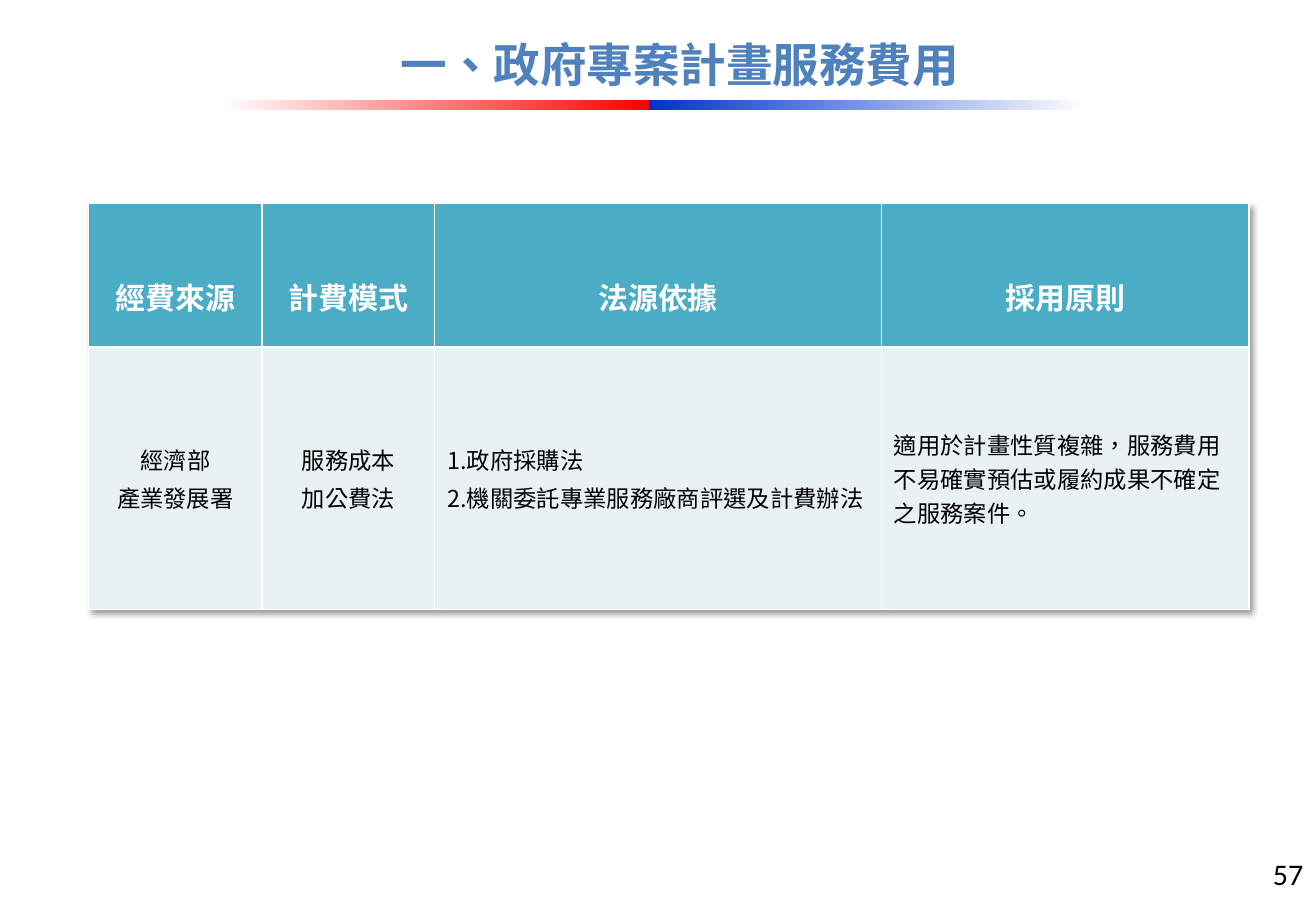
from dataclasses import dataclass

from lxml import etree
from pptx import Presentation
from pptx import util as u
from pptx.dml.color import RGBColor
from pptx.enum import shapes, text
from pptx.oxml import ns


@dataclass(frozen=True)
class Theme:
    """Colours, fonts and type sizes of the slide."""
    title: str = "4F81BD"
    header: str = "4BACC6"
    body: str = "E9F1F5"
    white: str = "FFFFFF"
    black: str = "000000"
    red: str = "FF0000"
    blue: str = "0033CC"
    cjk: str = "Noto Sans CJK SC"
    title_size: int = 28
    header_size: int = 18
    body_size: int = 14
    number_size: int = 18


THEME = Theme()
CENTER, LEFT, RIGHT = text.PP_ALIGN.CENTER, text.PP_ALIGN.LEFT, text.PP_ALIGN.RIGHT
COLUMNS = (3.68, 3.66, 9.47, 7.8)
ROWS = (3.05, 5.56)
HEADINGS = ("經費來源", "計費模式", "法源依據", "採用原則")
DETAILS = (
    (("經濟部", "產業發展署"), CENTER, 0),
    (("服務成本", "加公費法"), CENTER, 0),
    (("1.政府採購法", "2.機關委託專業服務廠商評選及計費辦法"), LEFT, 0.25),
    (("適用於計畫性質複雜，服務費用不易確實預估或履約成果不確定之服務案件。",), LEFT, 0),
)


def add_element(parent, tag, **attributes):
    """Append a DrawingML child element and return it."""
    return etree.SubElement(parent, ns.qn(tag), attributes)


def write(frame, lines, size, color, align, font=THEME.cjk, bold=False):
    """Fill a text frame with one formatted paragraph per line."""
    frame.word_wrap = True
    frame.text = "\n".join(lines)
    for index, paragraph in enumerate(frame.paragraphs):
        paragraph.alignment = align
        if index:
            paragraph.space_before = u.Pt(round(size * 0.2, 1))
        for run in paragraph.runs:
            run.font.size, run.font.bold, run.font.name = u.Pt(size), bold, font
            run.font.color.rgb = RGBColor.from_string(color)
            properties = run._r.get_or_add_rPr()
            properties.set("lang", "zh-TW")
            add_element(properties, "a:ea", typeface=THEME.cjk)


def add_label(slide, box, line, size, color, align, font, bold=False):
    """Add a vertically centred one-line text box."""
    shape = slide.shapes.add_textbox(*map(u.Cm, box))
    write(shape.text_frame, [line], size, color, align, font, bold)
    shape.text_frame.vertical_anchor = text.MSO_ANCHOR.MIDDLE


def add_gradient_bar(slide, left, width, start, end):
    """Add a thin bar that fades from left to right."""
    shape = slide.shapes.add_shape(
        shapes.MSO_SHAPE.RECTANGLE, u.Cm(left), u.Cm(2.13), u.Cm(width), u.Cm(0.2))
    shape.shadow.inherit = False
    shape.line.fill.background()
    shape.fill.gradient()
    shape.fill.gradient_angle = 0
    for stop, position, color in zip(shape.fill.gradient_stops, (0, 1), (start, end)):
        stop.position = position
        stop.color.rgb = RGBColor.from_string(color)


def style_cell(cell, color, bottom_width):
    """Give a cell its fill and white borders."""
    properties = cell._tc.get_or_add_tcPr()
    widths = {"a:lnL": 1, "a:lnR": 1, "a:lnT": 1, "a:lnB": bottom_width}
    for tag, width in widths.items():
        line = add_element(properties, tag, w=str(u.Pt(width)))
        add_element(add_element(line, "a:solidFill"), "a:srgbClr", val=THEME.white)
    cell.fill.solid()
    cell.fill.fore_color.rgb = RGBColor.from_string(color)
    cell.margin_left = cell.margin_right = u.Cm(0.27)
    cell.margin_top = cell.margin_bottom = u.Cm(0.13)


def add_table_shadow(table):
    """Cast a soft shadow towards the lower right of the table."""
    properties = table._tbl.tblPr
    effects = add_element(properties, "a:effectLst")
    properties.insert(0, effects)
    shadow = add_element(effects, "a:outerShdw", blurRad=str(u.Pt(4)), dist=str(u.Pt(3)),
                         dir="2700000", algn="tl", rotWithShape="0")
    color = add_element(shadow, "a:srgbClr", val=THEME.black)
    add_element(color, "a:alpha", val="40000")


def add_fee_table(slide):
    """Add the table of funding sources and fee rules."""
    table = slide.shapes.add_table(
        len(ROWS), len(COLUMNS), u.Cm(1.88), u.Cm(4.32),
        u.Cm(sum(COLUMNS)), u.Cm(sum(ROWS))).table
    for column, width in zip(table.columns, COLUMNS):
        column.width = u.Cm(width)
    for row, height in zip(table.rows, ROWS):
        row.height = u.Cm(height)
    for index, (heading, (lines, align, indent)) in enumerate(zip(HEADINGS, DETAILS)):
        header, detail = table.cell(0, index), table.cell(1, index)
        style_cell(header, THEME.header, 1.5)
        write(header.text_frame, [heading], THEME.header_size, THEME.white, CENTER, bold=True)
        header.text_frame.paragraphs[0].line_spacing = 2.5
        style_cell(detail, THEME.body, 1)
        write(detail.text_frame, lines, THEME.body_size, THEME.black, align)
        detail.vertical_anchor = text.MSO_ANCHOR.MIDDLE
        for paragraph in detail.text_frame.paragraphs:
            properties = paragraph._p.get_or_add_pPr()
            properties.set("marL", str(u.Cm(indent)))
            properties.set("indent", str(-u.Cm(indent)))
    add_table_shadow(table)


def main():
    """Build the slide and save it."""
    presentation = Presentation()
    presentation.slide_width, presentation.slide_height = u.Cm(27.91), u.Cm(19.05)
    slide = presentation.slides.add_slide(presentation.slide_layouts[6])
    add_gradient_bar(slide, 4.7, 9.07, THEME.white, THEME.red)
    add_gradient_bar(slide, 13.77, 9.3, THEME.blue, THEME.white)
    add_label(slide, (22.53, 18.01, 5.36, 1.04), "57", THEME.number_size,
              THEME.black, RIGHT, "Calibri")
    add_label(slide, (2.31, 0.38, 24.21, 1.96), "一、政府專案計畫服務費用",
              THEME.title_size, THEME.title, CENTER, "Arial", bold=True)
    add_fee_table(slide)
    presentation.save("out.pptx")


if __name__ == "__main__":
    main()
